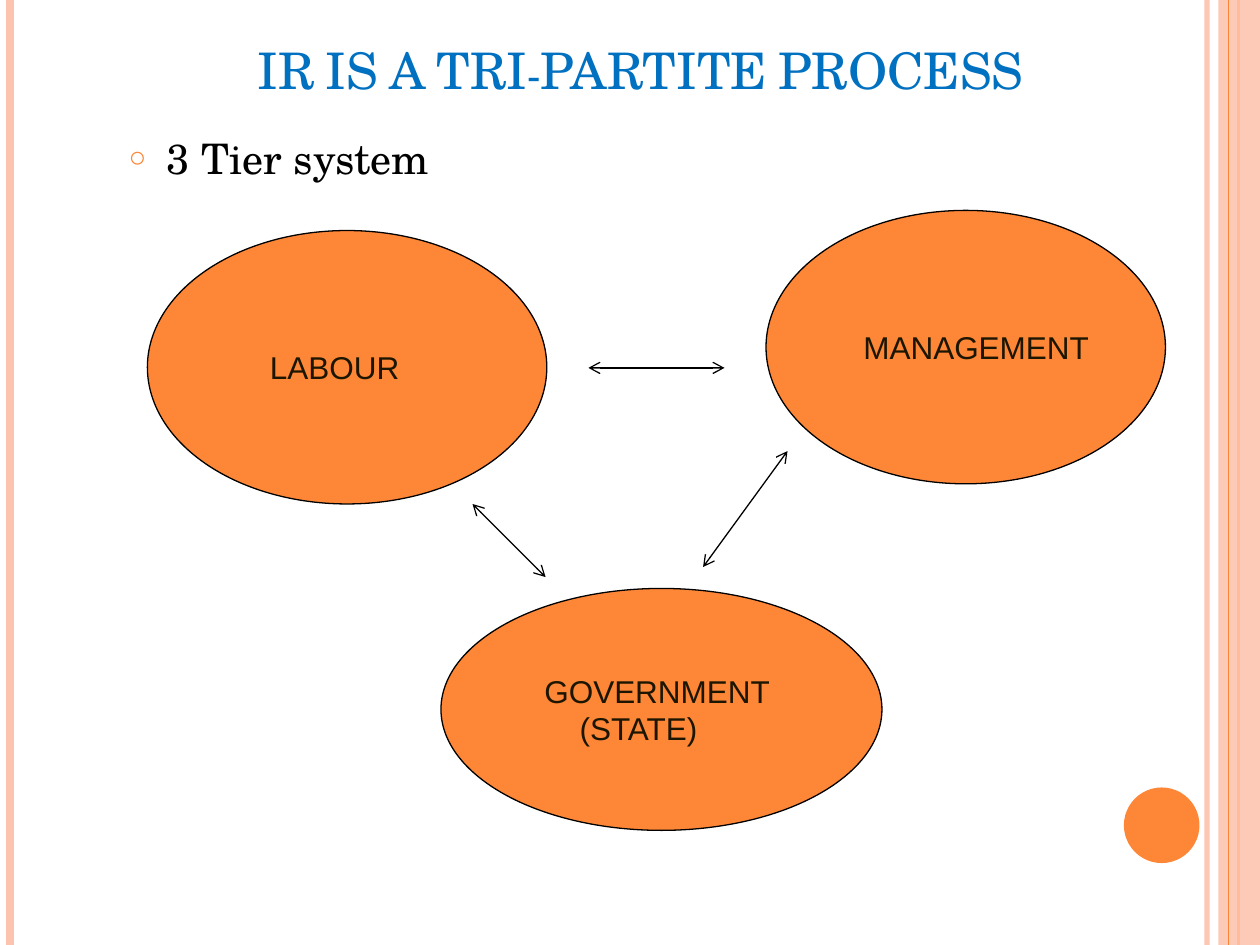
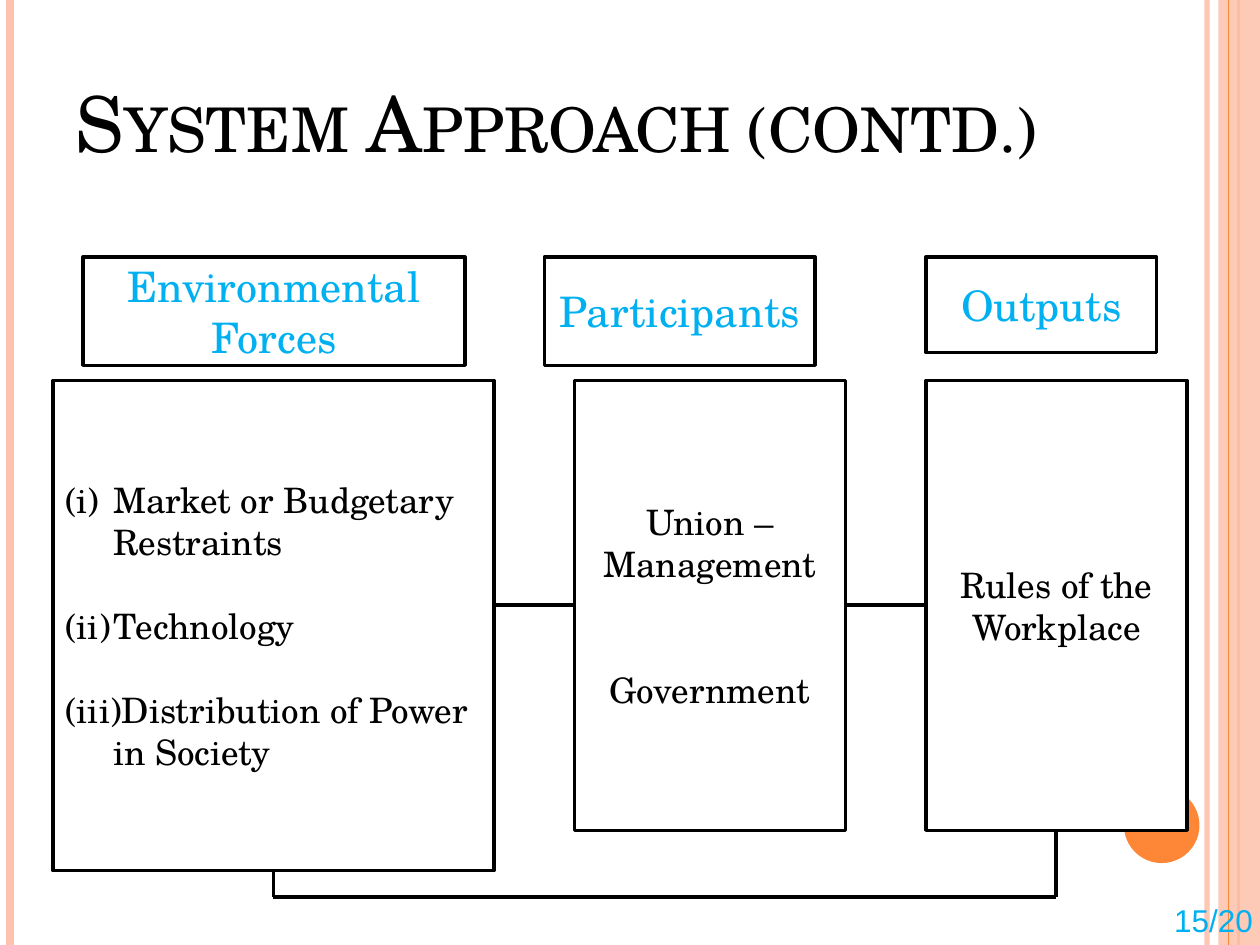
from dataclasses import dataclass

from lxml import etree
from pptx import Presentation
from pptx.dml.color import RGBColor
from pptx.enum.shapes import MSO_CONNECTOR, MSO_SHAPE
from pptx.enum.text import MSO_ANCHOR, PP_ALIGN
from pptx.oxml.ns import qn
from pptx.util import Inches, Pt

STRAIGHT = MSO_CONNECTOR.STRAIGHT
OVAL, RECT = MSO_SHAPE.OVAL, MSO_SHAPE.RECTANGLE
LEFT, CENTER = PP_ALIGN.LEFT, PP_ALIGN.CENTER
MIDDLE, BOTTOM = MSO_ANCHOR.MIDDLE, MSO_ANCHOR.BOTTOM


@dataclass(frozen=True)
class Theme:
    orange: str = "FE8637"
    peach: str = "FEC3AE"
    black: str = "000000"
    white: str = "FFFFFF"
    blue: str = "0070C0"
    cyan: str = "00B0F0"
    label: str = "1C1601"
    serif: str = "TeX Gyre Schola"
    sans: str = "Arial"
    process_title: float = 28.8
    approach_title: float = 44
    heading: float = 24
    detail: float = 20
    small: float = 18
    thin: float = 0.75
    thick: float = 2


theme = Theme()


def draw(slide, kind, at, fill=None, line=None, weight=theme.thin, opacity=100):
    lengths = [Inches(value) for value in at]
    if fill:
        item = slide.shapes.add_shape(kind, *lengths)
        item.shadow.inherit = False
        item.fill.solid()
        item.fill.fore_color.rgb = RGBColor.from_string(fill)
    else:
        item = slide.shapes.add_connector(kind, *lengths)
        etree.SubElement(item.element.spPr, qn("a:effectLst"))
    if line:
        item.line.color.rgb = RGBColor.from_string(line)
        item.line.width = Pt(weight)
    else:
        item.line.fill.background()
    if opacity < 100:
        for color in item.element.xpath("./p:spPr//a:srgbClr"):
            etree.SubElement(color, qn("a:alpha"), val=str(opacity * 1000))
    return item


def write(paragraph, text, font, size, color, align=LEFT):
    paragraph.alignment = align
    run = paragraph.add_run()
    run.text = text
    run.font.name = font
    run.font.size = Pt(size)
    run.font.color.rgb = RGBColor.from_string(color)
    return run


prs = Presentation()
prs.slide_width, prs.slide_height = Inches(10), Inches(7.5)
process = prs.slides.add_slide(prs.slide_layouts[1])
approach = prs.slides.add_slide(prs.slide_layouts[5])

bands = [
    (STRAIGHT, (9.58, 0, 9.58, 7.5), None, theme.peach, 3, 93),
    (STRAIGHT, (0.08, 0, 0.08, 7.5), None, theme.peach, 4.5, 100),
    (STRAIGHT, (9.83, 0, 9.83, 7.5), None, theme.orange, 1.5, 100),
    (RECT, (9.67, 0, 0.33, 7.5), theme.peach, None, 0, 87),
    (STRAIGHT, (9.75, 0, 9.75, 7.5), None, theme.orange, 0.75, 100),
    (OVAL, (8.92, 6.25, 0.6, 0.6), theme.orange, None, 0, 100),
]
master_tree = prs.slide_master.shapes.element
for order, band in enumerate(bands):
    decoration = draw(process, *band).element
    decoration.xpath(".//p:cNvPr")[0].set("id", str(100 + order))
    master_tree.insert(2 + order, decoration)

titles = [
    (process, "IR IS A TRI-PARTITE PROCESS", (0.5, 0.27, 9.17, 0.57),
     theme.process_title, theme.blue, CENTER),
    (approach, "System Approach (contd.)", (0.5, 0.44, 9, 0.94),
     theme.approach_title, theme.black, LEFT),
]
for slide, text, at, size, color, align in titles:
    title = slide.shapes.title
    title.left, title.top, title.width, title.height = map(Inches, at)
    title.text_frame.vertical_anchor = BOTTOM
    run = write(title.text_frame.paragraphs[0], text, theme.serif, size, color, align)
    run._r.get_or_add_rPr().set("cap", "small")

tiers = process.placeholders[1]
tiers.left, tiers.top, tiers.width, tiers.height = map(Inches, (0.92, 1, 8.76, 5.67))
tier_line = tiers.text_frame.paragraphs[0]
write(tier_line, "3 Tier system", theme.serif, theme.heading, theme.black)
tier_line.space_before = Pt(6)
bullet = tier_line._p.get_or_add_pPr()
bullet.set("marL", str(Inches(0.3)))
bullet.set("indent", str(-Inches(0.3)))
bullet_color = etree.SubElement(bullet, qn("a:buClr"))
etree.SubElement(bullet_color, qn("a:srgbClr"), val=theme.orange)
etree.SubElement(bullet, qn("a:buSzPct"), val="70000")
etree.SubElement(bullet, qn("a:buChar"), char="○")

parties = [
    ((1.17, 1.83, 3.17, 2.17), [("LABOUR", 0.41)]),
    ((6.08, 1.67, 3.17, 2.17), [("MANAGEMENT", 0.21)]),
    ((3.5, 4.67, 3.5, 1.92), [("GOVERNMENT", 0.21), ("(STATE)", 0.49)]),
]
for at, labels in parties:
    party = draw(process, OVAL, at, theme.orange, theme.black)
    frame = party.text_frame
    frame.vertical_anchor = MIDDLE
    frame.margin_right = 0
    for row, (label, indent) in enumerate(labels):
        paragraph = frame.add_paragraph() if row else frame.paragraphs[0]
        write(paragraph, label, theme.sans, theme.small, theme.label)
        paragraph._p.get_or_add_pPr().set("marL", str(Inches(indent)))

for at in [(3.75, 4, 4.33, 4.58), (6.25, 3.58, 5.58, 4.5), (4.67, 2.92, 5.75, 2.92)]:
    relation = draw(process, STRAIGHT, at, line=theme.black)
    stroke = relation.element.xpath("./p:spPr/a:ln")[0]
    for end in ("a:headEnd", "a:tailEnd"):
        etree.SubElement(stroke, qn(end), type="arrow")

detail_style = (theme.detail, theme.black)
heading_style = (theme.heading, theme.cyan)
boxes = [
    ((0.42, 3.02, 3.5, 3.89), detail_style, LEFT, 24,
     ["Market or Budgetary Restraints", "Technology", "Distribution of Power in Society"]),
    ((4.56, 3.02, 2.15, 3.57), detail_style, CENTER, 48, ["Union – Management", "Government"]),
    ((7.35, 3.02, 2.07, 3.57), detail_style, CENTER, 0, ["Rules of the Workplace"]),
    ((0.66, 2.04, 3.03, 0.86), heading_style, CENTER, 0, ["Environmental Forces"]),
    ((4.32, 2.04, 2.15, 0.86), heading_style, CENTER, 0, ["Participants"]),
    ((7.35, 2.04, 1.83, 0.76), heading_style, CENTER, 0, ["Outputs"]),
]
for at, style, align, gap, texts in boxes:
    box = draw(approach, RECT, at, theme.white, theme.black, theme.thick)
    frame = box.text_frame
    frame.word_wrap = True
    frame.vertical_anchor = MIDDLE
    for row, text in enumerate(texts):
        paragraph = frame.add_paragraph() if row else frame.paragraphs[0]
        write(paragraph, text, theme.serif, *style, align)
        if row:
            paragraph.space_before = Pt(gap)
        if align == LEFT:
            numbering = paragraph._p.get_or_add_pPr()
            numbering.set("marL", str(Inches(0.38)))
            numbering.set("indent", str(-Inches(0.38)))
            etree.SubElement(numbering, qn("a:buAutoNum"), type="romanLcParenBoth")

flow = [
    (3.92, 4.8, 4.56, 4.8),
    (6.71, 4.8, 7.35, 4.8),
    (2.17, 6.91, 2.17, 7.12),
    (8.38, 6.58, 8.38, 7.12),
    (2.17, 7.12, 8.38, 7.12),
]
for at in flow:
    draw(approach, STRAIGHT, at, line=theme.black, weight=theme.thick)

page_number = approach.shapes.add_textbox(*map(Inches, (9.22, 7.1, 0.83, 0.4)))
page_number.text_frame.word_wrap = False
write(page_number.text_frame.paragraphs[0], "15/20", theme.sans, theme.small, theme.cyan)

prs.save("out.pptx")
